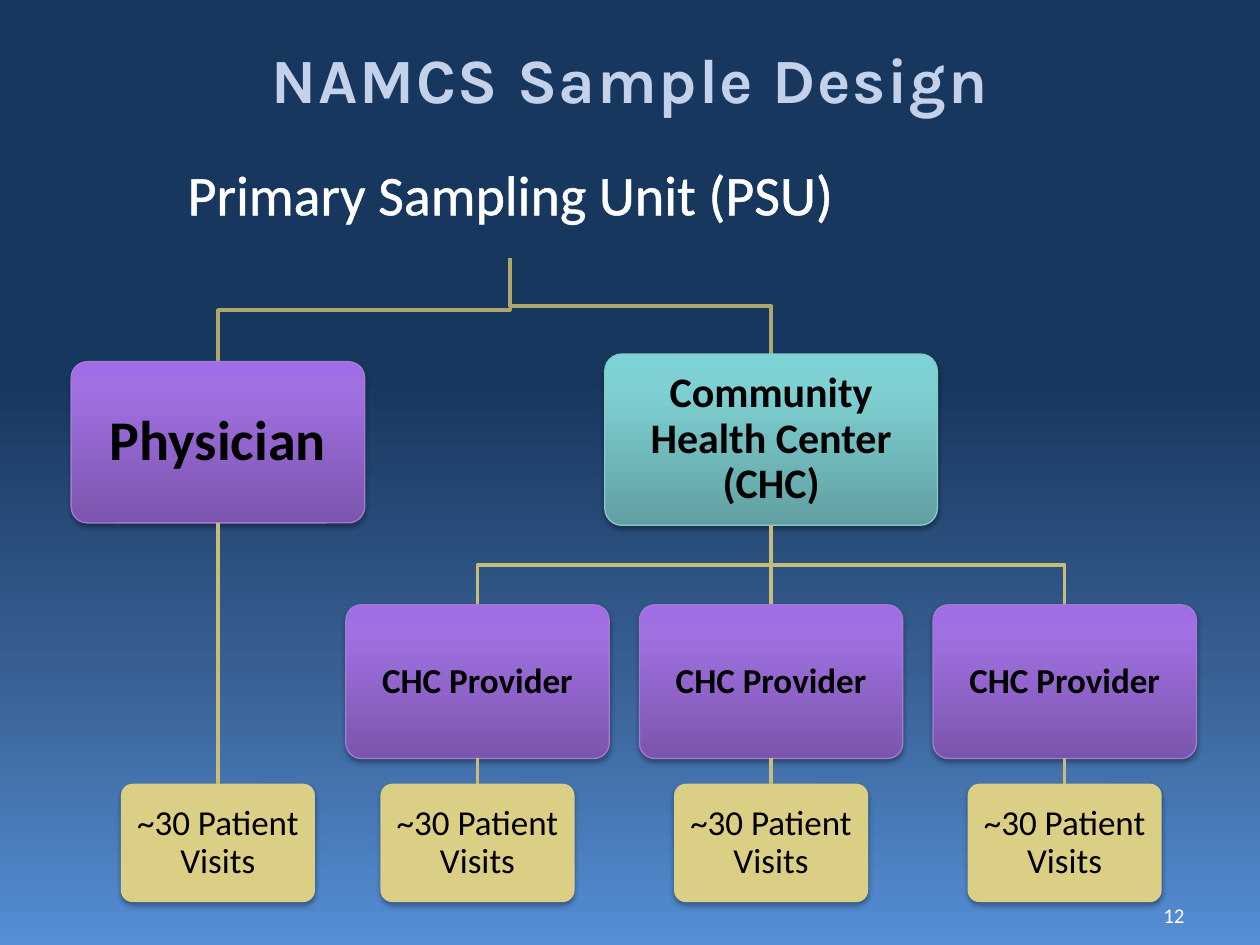
from lxml import etree
from pptx import Presentation
from pptx.dml.color import RGBColor
from pptx.enum import shapes, text
from pptx.oxml import ns, parse_xml
from pptx.util import Inches, Pt

TITLE = "NAMCS Sample Design"
ROOT = "Primary Sampling Unit (PSU)"
PAGE_NUMBER = "12"
VISITS = "~30 Patient Visits"

BACKGROUND = [(0, "17375E"), (40, "17375E"), (70, "375F92"), (100, "558ED5")]
PURPLE = [(0, "7B55AD"), (80, "A06FE0"), (100, "A16DE4")]
TEAL = [(0, "61A0A2"), (80, "7ED0D2"), (100, "7DD2D5")]
SAND = "DBCF85"
UPPER_LINE, LOWER_LINE = "AFA66B", "C7BC79"

# Boxes of each kind share a size, row, look and type size
STYLES = {
    "physician": dict(top=2.87, width=2.33, height=1.28, fill=PURPLE, edge="A37BD7", size=32, bold=True, inset=0.13),
    "center": dict(top=2.81, width=2.64, height=1.36, fill=TEAL, edge="87CACC", size=24, bold=True, inset=0.1),
    "provider": dict(top=4.8, width=2.09, height=1.22, fill=PURPLE, edge="A37BD7", size=20, bold=True, inset=0.08),
    "visits": dict(top=6.22, width=1.54, height=0.94, fill=SAND, edge=None, size=20, bold=False, inset=0.08),
}

ROOT_X, ROOT_BOTTOM = 4.05, 2.05
PHYSICIAN_X, CENTER_X, PROVIDER_STEP = 1.73, 6.12, 2.33

# (kind, label, offset from the parent's centre, children)
PROVIDERS = [("provider", "CHC Provider", step * PROVIDER_STEP, [("visits", VISITS, 0, [])])
             for step in (-1, 0, 1)]
TREE = [
    ("physician", "Physician", PHYSICIAN_X - ROOT_X, [("visits", VISITS, 0, [])]),
    ("center", "Community Health Center (CHC)", CENTER_X - ROOT_X, PROVIDERS),
]


def rgb(color):
    return RGBColor.from_string(color)


def set_gradient(fill, owner, stops, angle):
    """Give fill, held in the XML element owner, any number of stops."""
    fill.gradient()
    fill.gradient_angle = angle
    stop_list = owner.find(".//" + ns.qn("a:gsLst"))
    for old in list(stop_list):
        stop_list.remove(old)
    for position, color in stops:
        stop = etree.SubElement(stop_list, ns.qn("a:gs"), pos=str(position * 1000))
        etree.SubElement(stop, ns.qn("a:srgbClr"), val=color)


def add_effects(owner, content=""):
    owner.append(parse_xml(f'<a:effectLst {ns.nsdecls("a")}>{content}</a:effectLst>'))


def write(frame, words, size, color, align=text.PP_ALIGN.CENTER, bold=False,
          inset=None, line_spacing=None, font="Calibri"):
    frame.word_wrap = True
    frame.vertical_anchor = text.MSO_ANCHOR.MIDDLE
    if inset is not None:
        frame.margin_left = frame.margin_right = Inches(inset)
        frame.margin_top = frame.margin_bottom = Inches(inset)
    paragraph = frame.paragraphs[0]
    paragraph.alignment = align
    paragraph.line_spacing = line_spacing
    run = paragraph.add_run()
    run.text = words
    run.font.name, run.font.size, run.font.bold = font, Pt(size), bold
    run.font.color.rgb = rgb(color)
    return run


def add_link(slide, x1, y1, x2, y2, color):
    """Join two boxes, bending halfway down when they are not aligned."""
    if x1 == x2:
        link = slide.shapes.add_connector(
            shapes.MSO_CONNECTOR.STRAIGHT, Inches(x1), Inches(y1), Inches(x2), Inches(y2))
        add_effects(link._element.spPr)
    else:
        middle = (y1 + y2) / 2
        builder = slide.shapes.build_freeform(Inches(x1), Inches(y1))
        builder.add_line_segments(
            [(Inches(x), Inches(y)) for x, y in ((x1, middle), (x2, middle), (x2, y2))], close=False)
        link = builder.convert_to_shape()
        link.fill.background()
        link.shadow.inherit = False
    link.line.color.rgb = rgb(color)
    link.line.width = Pt(2)


def add_box(slide, label, center_x, style):
    box = slide.shapes.add_shape(
        shapes.MSO_SHAPE.ROUNDED_RECTANGLE, Inches(center_x - style["width"] / 2),
        Inches(style["top"]), Inches(style["width"]), Inches(style["height"]))
    box.adjustments[0] = 0.1
    properties = box._element.spPr
    if isinstance(style["fill"], str):
        box.fill.solid()
        box.fill.fore_color.rgb = rgb(style["fill"])
    else:
        set_gradient(box.fill, properties, style["fill"], 90)
    if style["edge"]:
        box.line.color.rgb = rgb(style["edge"])
        box.line.width = Pt(0.75)
    else:
        box.line.fill.background()
    add_effects(properties, f'<a:outerShdw blurRad="{Pt(3.1)}" dist="{Pt(1.8)}" dir="5400000" rotWithShape="0">'
                            '<a:srgbClr val="000000"><a:alpha val="35000"/></a:srgbClr></a:outerShdw>')
    write(box.text_frame, label, style["size"], "000000", bold=style["bold"],
          inset=style["inset"], line_spacing=0.9)


def add_branches(slide, nodes, parent_x, parent_bottom, line_color):
    for kind, label, offset, children in nodes:
        style = STYLES[kind]
        x = parent_x + offset
        add_link(slide, parent_x, parent_bottom, x, style["top"], line_color)
        add_box(slide, label, x, style)
        add_branches(slide, children, x, style["top"] + style["height"], LOWER_LINE)


def add_label(slide, left, top, width, height):
    return slide.shapes.add_textbox(Inches(left), Inches(top), Inches(width), Inches(height)).text_frame


def main():
    deck = Presentation()
    deck.slide_width, deck.slide_height = Inches(10), Inches(7.5)
    slide = deck.slides.add_slide(deck.slide_layouts[5])
    set_gradient(slide.background.fill, slide._element, BACKGROUND, 270)

    title = slide.shapes.title
    title.left, title.top, title.width, title.height = Inches(0.5), Inches(0), Inches(9), Inches(1.25)
    title_run = write(title.text_frame, TITLE, 36, "C4D1EB", bold=True, font="Karla")
    title_run.font._element.set("spc", "100")

    root_run = write(add_label(slide, 0.55, 1.08, 7.01, 0.97), ROOT, 32, "FFFFFF",
                     inset=0.13, line_spacing=0.9)
    root_run.font._element.insert(0, parse_xml(
        f'<a:ln {ns.nsdecls("a")} w="{Pt(1.45)}"><a:solidFill><a:srgbClr val="FFFFFF"/></a:solidFill></a:ln>'))

    add_branches(slide, TREE, ROOT_X, ROOT_BOTTOM, UPPER_LINE)
    write(add_label(slide, 7.17, 7.17, 2.33, 0.18), PAGE_NUMBER, 12, "FFFFFF", align=text.PP_ALIGN.RIGHT)
    deck.save("out.pptx")


if __name__ == "__main__":
    main()
